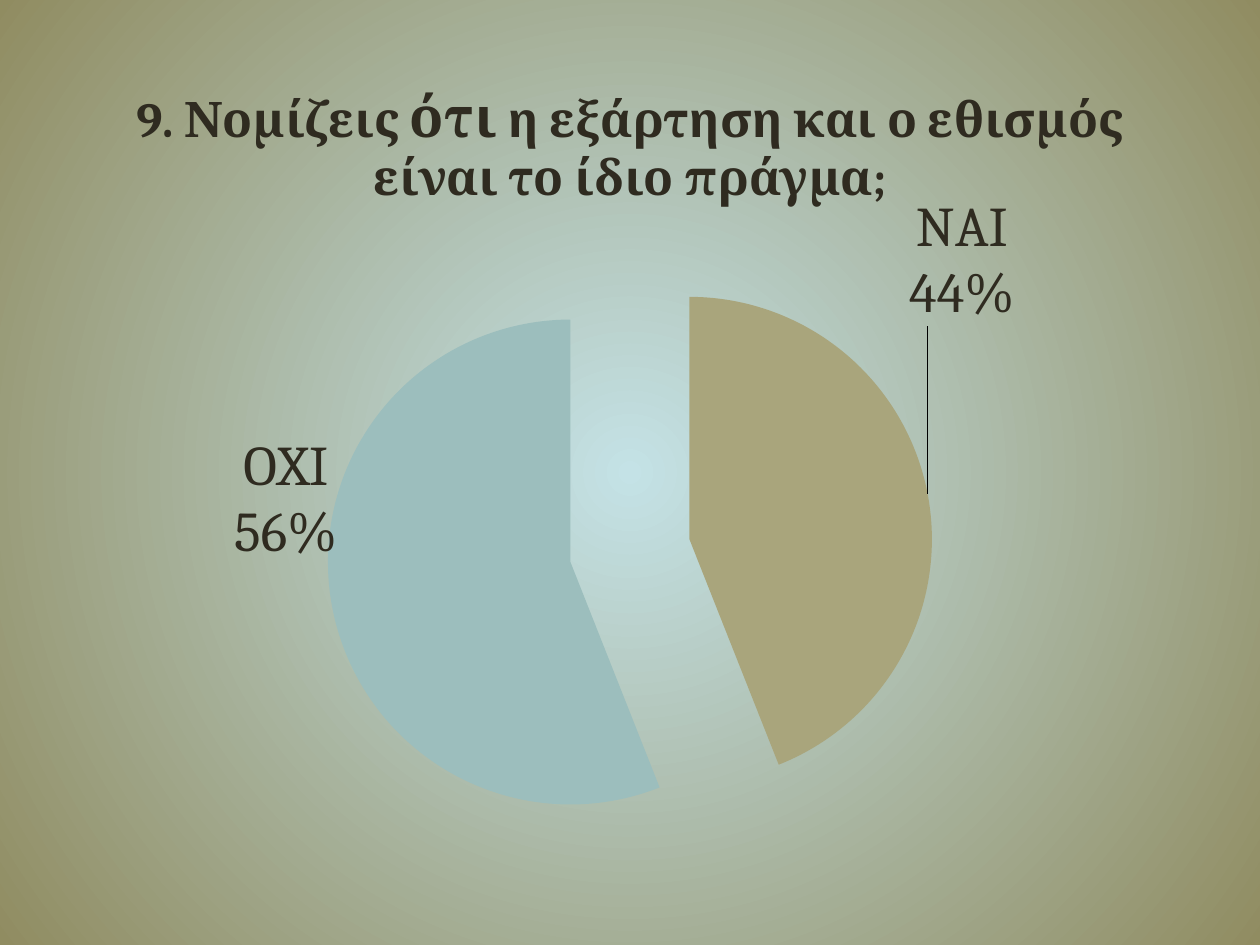
from dataclasses import dataclass

from lxml import etree
from pptx import Presentation
from pptx.chart.data import CategoryChartData
from pptx.dml.color import RGBColor
from pptx.enum import chart as ch
from pptx.oxml import parse_xml
from pptx.oxml.ns import nsdecls, qn
from pptx.util import Inches, Pt

COLORS = {"text": "2F2B20", "center": "C4E2E6", "edge": "908C61",
          "yes": "A9A57C", "no": "9CBEBD"}
FONT = "Cambria"
# Each part of the question with its size in points
QUESTION = [("9. Νομίζεις ", 28), ("ότι", 32),
            (" η εξάρτηση και ο εθισμός είναι το ίδιο πράγμα;", 28)]


@dataclass
class Answer:
    name: str
    percent: int
    color: str
    label_dx: float
    label_dy: float


ANSWERS = [Answer("NAI", 44, "yes", -0.02, -0.2),
           Answer("OXI", 56, "no", 0.01, -0.21)]


def rgb(name: str) -> RGBColor:
    return RGBColor.from_string(COLORS[name])


def style_font(font, size: float, name: str = FONT) -> None:
    font.size = Pt(size)
    font.name = name
    font.color.rgb = rgb("text")


def manual_layout(**values):
    """Return a c:layout element; keys are its children in schema order."""
    children = "".join(f'<c:{k} val="{v}"/>' for k, v in values.items())
    return parse_xml(f'<c:layout {nsdecls("c")}><c:manualLayout>{children}'
                     "</c:manualLayout></c:layout>")


def paint_background(slide) -> None:
    fill = slide.background.fill
    fill.gradient()
    for stop, name in zip(fill.gradient_stops, ("center", "edge")):
        stop.color.rgb = rgb(name)
    grad = slide.element.find(".//" + qn("a:gradFill"))
    grad.replace(grad.find(qn("a:lin")), parse_xml(
        f'<a:path {nsdecls("a")} path="circle">'
        '<a:fillToRect l="50000" t="50000" r="50000" b="50000"/></a:path>'))


def show_name_and_percent(label) -> None:
    """Make a c:dLbl or c:dLbls show category and percentage on two lines."""
    for tag, on in (("showVal", 0), ("showCatName", 1), ("showPercent", 1)):
        label.find(qn("c:" + tag)).set("val", str(on))
    separator = etree.Element(qn("c:separator"))
    separator.text = "\n"
    last = label.find(qn("c:showBubbleSize"))
    if last is None:
        last = label.find(qn("c:showPercent"))
    last.addnext(separator)


def add_title(chart) -> None:
    chart.has_title = True
    p = chart.chart_title.text_frame.paragraphs[0]
    for words, size in QUESTION:
        r = p.add_run()
        r.text = words
        style_font(r.font, size)
        r.font.bold = True


def style_series(series) -> None:
    labels = series.data_labels
    style_font(labels.font, 32)
    for i, answer in enumerate(ANSWERS):
        point = series.points[i]
        point.format.fill.solid()
        point.format.fill.fore_color.rgb = rgb(answer.color)
        style_font(point.data_label.font, 32)
        point.data_label.position = ch.XL_LABEL_POSITION.OUTSIDE_END

    ser = series._element
    ser.find(qn("c:dPt")).addprevious(
        parse_xml(f'<c:explosion {nsdecls("c")} val="25"/>'))
    group = ser.find(qn("c:dLbls"))
    show_name_and_percent(group)
    for label, answer in zip(group.findall(qn("c:dLbl")), ANSWERS):
        show_name_and_percent(label)
        label.find(qn("c:idx")).addnext(
            manual_layout(x=answer.label_dx, y=answer.label_dy))


def add_pie(slide) -> None:
    data = CategoryChartData()
    data.categories = [a.name for a in ANSWERS]
    data.add_series("".join(words for words, _ in QUESTION),
                    [a.percent for a in ANSWERS])
    chart = slide.shapes.add_chart(
        ch.XL_CHART_TYPE.PIE, Inches(-0.09), Inches(0.45),
        Inches(10.18), Inches(6.59), data).chart
    style_font(chart.font, 10, "Roboto")
    chart.has_legend = False
    add_title(chart)
    chart.plots[0].vary_by_categories = True
    style_series(chart.plots[0].series[0])

    area = chart._chartSpace.find(".//" + qn("c:plotArea"))
    old = area.find(qn("c:layout"))
    if old is not None:
        area.remove(old)
    area.insert(0, manual_layout(layoutTarget="inner", xMode="edge",
                                 yMode="edge", x=0.26, y=0.23, w=0.48, h=0.73))


def main() -> None:
    prs = Presentation()
    prs.slide_width, prs.slide_height = Inches(10), Inches(7.5)
    slide = prs.slides.add_slide(prs.slide_layouts[6])
    paint_background(slide)
    add_pie(slide)
    prs.save("out.pptx")


if __name__ == "__main__":
    main()
